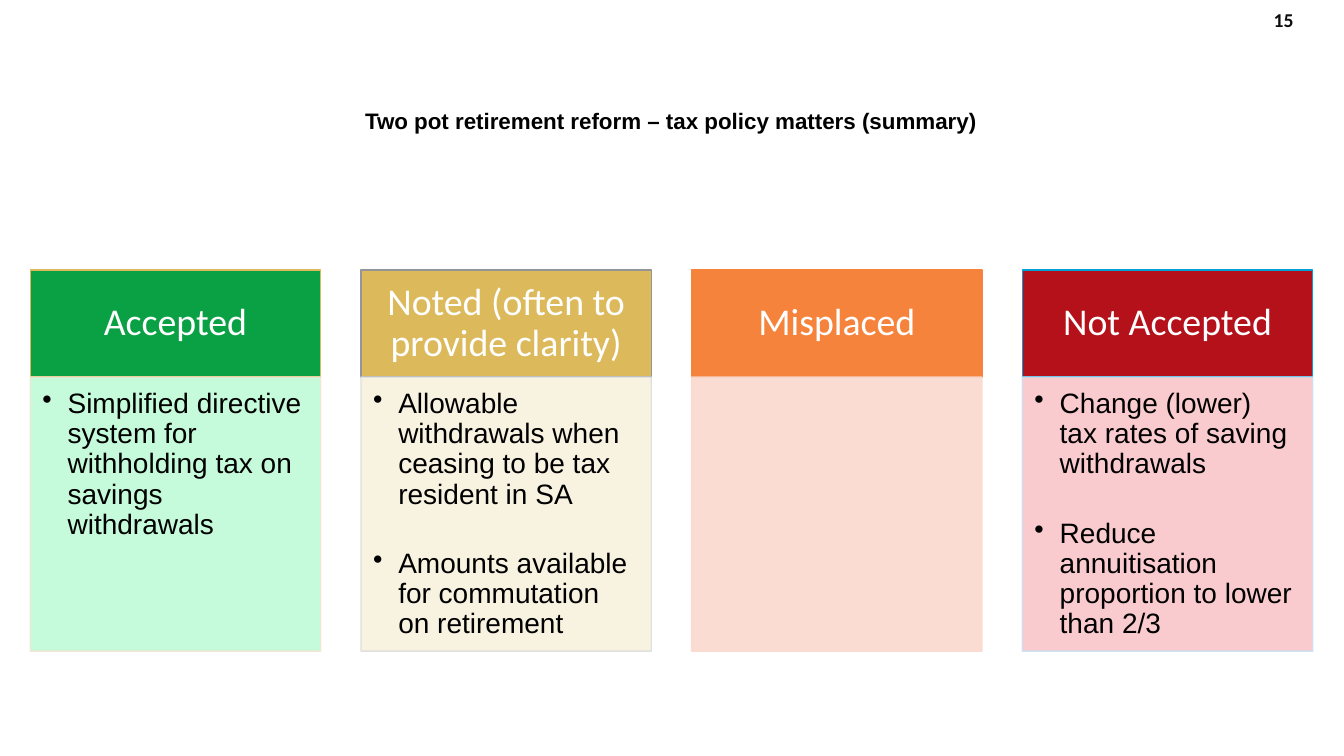
from lxml import etree
from pptx import Presentation
from pptx.dml.color import RGBColor
from pptx.enum.shapes import MSO_SHAPE
from pptx.enum.text import MSO_ANCHOR, PP_ALIGN
from pptx.oxml.ns import qn
from pptx.util import Inches, Pt

RECT = MSO_SHAPE.RECTANGLE
TOP, MIDDLE = MSO_ANCHOR.TOP, MSO_ANCHOR.MIDDLE
LEFT, CENTER, RIGHT = PP_ALIGN.LEFT, PP_ALIGN.CENTER, PP_ALIGN.RIGHT

# Column grid, in inches
START, STEP, WIDTH = 0.3, 3.28, 2.88
HEAD_TOP, HEAD_H, BODY_H = 2.68, 1.06, 2.72

COLUMNS = [
    ("Accepted", "0AA145", "DCB95B", "BFFBD7", "F2E6D2",
     ["Simplified directive system for withholding tax on savings withdrawals"]),
    ("Noted (often to provide clarity)", "DCB95B", "939598", "F8F1DE", "DCDDDD",
     ["Allowable withdrawals when ceasing to be tax resident in SA",
      "Amounts available for commutation on retirement"]),
    ("Misplaced", "F5833C", "F5833C", "FBD9CE", "FBD9CE", []),
    ("Not Accepted", "B5111A", "00A0D9", "FAC6C9", "CCDFF1",
     ["Change (lower) tax rates of saving withdrawals",
      "Reduce annuitisation proportion to lower than 2/3"]),
]


def paint(color, tone):
    color.rgb = RGBColor.from_string(tone)


def write(shape, texts, font, size, tone, align, anchor, pads, space, bold=False):
    """Fill a shape with one paragraph per text; pads are left, top, right, bottom."""
    frame = shape.text_frame
    frame.word_wrap = True
    frame.vertical_anchor = anchor
    (frame.margin_left, frame.margin_top,
     frame.margin_right, frame.margin_bottom) = map(Inches, pads)
    for i, text in enumerate(texts):
        para = frame.add_paragraph() if i else frame.paragraphs[0]
        para.alignment = align
        para.line_spacing = space
        run = para.add_run()
        run.text = text
        run.font.name, run.font.size, run.font.bold = font, Pt(size), bold
        paint(run.font.color, tone)
    return frame.paragraphs


prs = Presentation()
prs.slide_width, prs.slide_height = Inches(13.33), Inches(7.5)
slide = prs.slides.add_slide(prs.slide_layouts[6])
shapes = slide.shapes

number = shapes.add_textbox(Inches(12.44), 0, Inches(0.59), Inches(0.4))
write(number, ["15"], "Calibri", 14, "0D0D0D", RIGHT, MIDDLE,
      (0, 0.05, 0.2, 0.05), 1.0, True)

title = shapes.add_textbox(Inches(0.29), Inches(0.63), Inches(12.73), Inches(0.98))
write(title, ["Two pot retirement reform – tax policy matters (summary)"],
      "Arial", 16, "000000", CENTER, MIDDLE, (0.1, 0.05, 0.1, 0.05), Pt(30.8), True)

for col, (name, fill, edge, tint, rim, points) in enumerate(COLUMNS):
    left = START + col * STEP
    head, body = [
        shapes.add_shape(RECT, Inches(left), Inches(top), Inches(WIDTH), Inches(high))
        for top, high in ((HEAD_TOP, HEAD_H), (HEAD_TOP + HEAD_H, BODY_H))
    ]
    for box, tone, line in ((head, fill, edge), (body, tint, rim)):
        box.shadow.inherit = False
        box.fill.solid()
        paint(box.fill.fore_color, tone)
        paint(box.line.color, line)
        box.line.width = Pt(1)
    for clr in body._element.spPr.iter(qn("a:srgbClr")):
        etree.SubElement(clr, qn("a:alpha"), val="90000")

    write(head, [name], "Calibri", 27, "FFFFFF", CENTER, MIDDLE,
          (0.21, 0.12, 0.21, 0.12), 0.9)
    if not points:
        continue
    paras = write(body, points, "Arial", 20, "000000", LEFT, TOP,
                  (0.12, 0.12, 0.16, 0.17), 0.9)
    for i, para in enumerate(paras):
        para.space_after = Pt(3)
        if i:
            para.space_before = Pt(25)
        props = para._p.get_or_add_pPr()
        props.set("marL", str(Inches(0.25)))
        props.set("indent", str(-Inches(0.25)))
        etree.SubElement(props, qn("a:buChar"), char="•")

prs.save("out.pptx")
